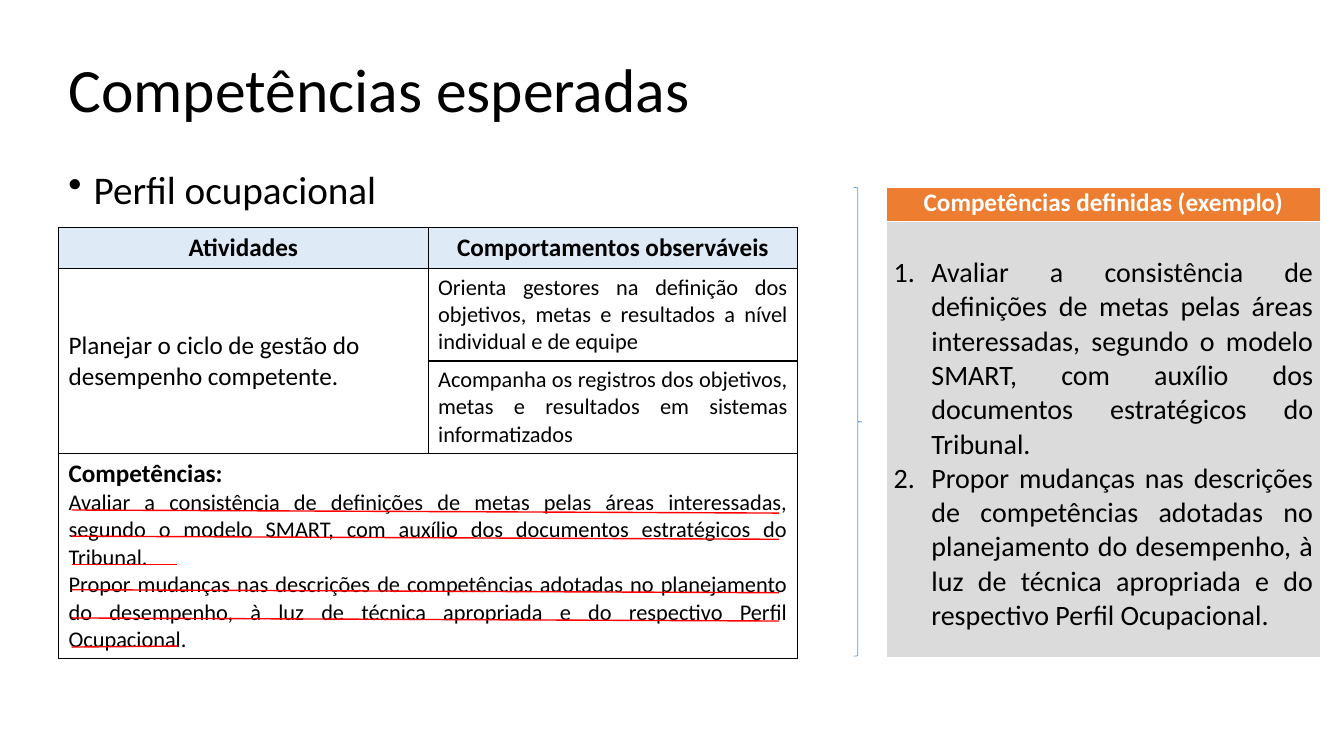
from pptx import Presentation
from pptx import util as u
from pptx.dml.color import RGBColor
from pptx.enum import shapes, text
from pptx.oxml import parse_xml
from pptx.oxml.ns import nsdecls

Pt = u.Pt
ALIGN = text.PP_ALIGN
MIDDLE = text.MSO_ANCHOR.MIDDLE
COLORS = {
    "text": "000000", "white": "FFFFFF", "orange": "ED7D31", "gray": "DBDBDB",
    "pale_blue": "DEEBF7", "blue": "5B9BD5", "red": "FF0000",
}
ROUND_BULLET = '<a:buChar {} char="•"/>'
NUMBERING = '<a:buAutoNum {} type="arabicPeriod"/>'

EVALUATE = ("Avaliar a consistência de definições de metas pelas áreas interessadas, "
            "segundo o modelo SMART, com auxílio dos documentos estratégicos do Tribunal.")
PROPOSE = ("Propor mudanças nas descrições de competências adotadas no planejamento do "
           "desempenho, à luz de técnica apropriada e do respectivo Perfil Ocupacional.")


def color(name):
    return RGBColor.from_string(COLORS[name])


class SlideBuilder:
    def __init__(self, slide, font="Calibri"):
        self.slide = slide
        self.font = font

    def add_text(self, frame, content, size=16, bold=False, ink="text", align=ALIGN.LEFT,
                 spacing=None, bullet=None, indent=0):
        """Add one formatted paragraph to a text frame."""
        paragraph = frame.paragraphs[0]
        if paragraph.runs:
            paragraph = frame.add_paragraph()
        if bullet:
            properties = paragraph._p.get_or_add_pPr()
            properties.set("marL", str(Pt(indent)))
            properties.set("indent", str(-Pt(indent)))
            properties.append(parse_xml(bullet.format(nsdecls("a"))))
        paragraph.alignment = align
        if spacing:
            paragraph.line_spacing = spacing
        run = paragraph.add_run()
        run.text = content
        run.font.name = self.font
        run.font.size = Pt(size)
        run.font.bold = bold
        run.font.color.rgb = color(ink)

    def textbox(self, left, top, width, height, content, anchor=text.MSO_ANCHOR.TOP, **style):
        frame = self.slide.shapes.add_textbox(Pt(left), Pt(top), Pt(width), Pt(height)).text_frame
        frame.word_wrap = True
        frame.vertical_anchor = anchor
        self.add_text(frame, content, **style)

    def table(self, left, top, widths, heights):
        frame = self.slide.shapes.add_table(len(heights), len(widths), Pt(left), Pt(top),
                                            Pt(sum(widths)), Pt(sum(heights)))
        table = frame.table
        table.first_row = table.horz_banding = False
        for column, width in zip(table.columns, widths):
            column.width = Pt(width)
        for row, height in zip(table.rows, heights):
            row.height = Pt(height)
        return table

    def borders(self, cell, ink="text", width=1):
        for side in "LRTB":
            cell._tc.get_or_add_tcPr().append(parse_xml(
                f'<a:ln{side} {nsdecls("a")} w="{Pt(width)}"><a:solidFill>'
                f'<a:srgbClr val="{COLORS[ink]}"/></a:solidFill></a:ln{side}>'))

    def fill(self, cell, name):
        cell.fill.solid()
        cell.fill.fore_color.rgb = color(name)

    def brace(self, left, top, width, height):
        shape = self.slide.shapes.add_shape(shapes.MSO_SHAPE.RIGHT_BRACE,
                                            Pt(left), Pt(top), Pt(width), Pt(height))
        shape.shadow.inherit = False
        shape.fill.background()
        shape.line.color.rgb = color("blue")
        shape.line.width = Pt(0.5)

    def line(self, x1, y1, x2, y2):
        connector = self.slide.shapes.add_connector(shapes.MSO_CONNECTOR.STRAIGHT,
                                                    Pt(x1), Pt(y1), Pt(x2), Pt(y2))
        connector.line.color.rgb = color("red")
        connector.line.width = Pt(1)
        connector._element.spPr.append(parse_xml(f'<a:effectLst {nsdecls("a")}/>'))


def add_example_table(builder):
    table = builder.table(632.9, 133.9, [310.5], [24.5, 311])
    header, body = table.cell(0, 0), table.cell(1, 0)
    for cell, fill, top in ((header, "orange", 0), (body, "gray", 24.4)):
        cell.margin_left = cell.margin_right = Pt(5.4)
        cell.margin_top, cell.margin_bottom = Pt(top), Pt(0)
        builder.fill(cell, fill)
    builder.add_text(header.text_frame, "Competências definidas (exemplo)", size=18, bold=True,
                     ink="white", align=ALIGN.CENTER)
    for competence in (EVALUATE, PROPOSE):
        builder.add_text(body.text_frame, competence, size=20, align=ALIGN.JUSTIFY,
                         bullet=NUMBERING, indent=27)


def add_profile_table(builder):
    table = builder.table(41.8, 162.7, [264, 264], [29.2, 66, 66, 146.5])
    for cell in table.iter_cells():
        builder.borders(cell)
        builder.fill(cell, "white")
        cell.vertical_anchor = MIDDLE
    table.cell(1, 0).merge(table.cell(2, 0))
    table.cell(3, 0).merge(table.cell(3, 1))

    for column, heading in enumerate(("Atividades", "Comportamentos observáveis")):
        cell = table.cell(0, column)
        builder.fill(cell, "pale_blue")
        builder.add_text(cell.text_frame, heading, size=18, bold=True, align=ALIGN.CENTER)
    builder.add_text(table.cell(1, 0).text_frame,
                     "Planejar o ciclo de gestão do desempenho competente.", size=18)
    behaviours = (
        "Orienta gestores na definição dos objetivos, metas e resultados a nível "
        "individual e de equipe",
        "Acompanha os registros dos objetivos, metas e resultados em sistemas informatizados",
    )
    for row, behaviour in enumerate(behaviours, start=1):
        builder.add_text(table.cell(row, 1).text_frame, behaviour, align=ALIGN.JUSTIFY)
    competences = table.cell(3, 0).text_frame
    builder.add_text(competences, "Competências:", size=18, bold=True)
    for competence in (EVALUATE, PROPOSE):
        builder.add_text(competences, competence, align=ALIGN.JUSTIFY)


def main():
    presentation = Presentation()
    presentation.slide_width, presentation.slide_height = Pt(960), Pt(540)
    builder = SlideBuilder(presentation.slides.add_slide(presentation.slide_layouts[6]))

    builder.textbox(41.8, 13.7, 852, 104.4, "Competências esperadas", anchor=MIDDLE,
                    size=44, spacing=0.9)
    builder.textbox(41.8, 118.1, 551.5, 44.6, "Perfil ocupacional", size=28, spacing=0.9,
                    bullet=ROUND_BULLET, indent=18)
    add_example_table(builder)
    builder.brace(609.8, 133.9, 5.8, 334.8)
    add_profile_table(builder)

    for top in (364.3, 383, 421.2, 441.4):
        builder.line(51.1, top, 556.6, top + 2.2)
    for start, end in ((462.2, 461.5), (403.2, 403.2)):
        builder.line(51.1, start, 126.7, end)

    presentation.save("out.pptx")


if __name__ == "__main__":
    main()
